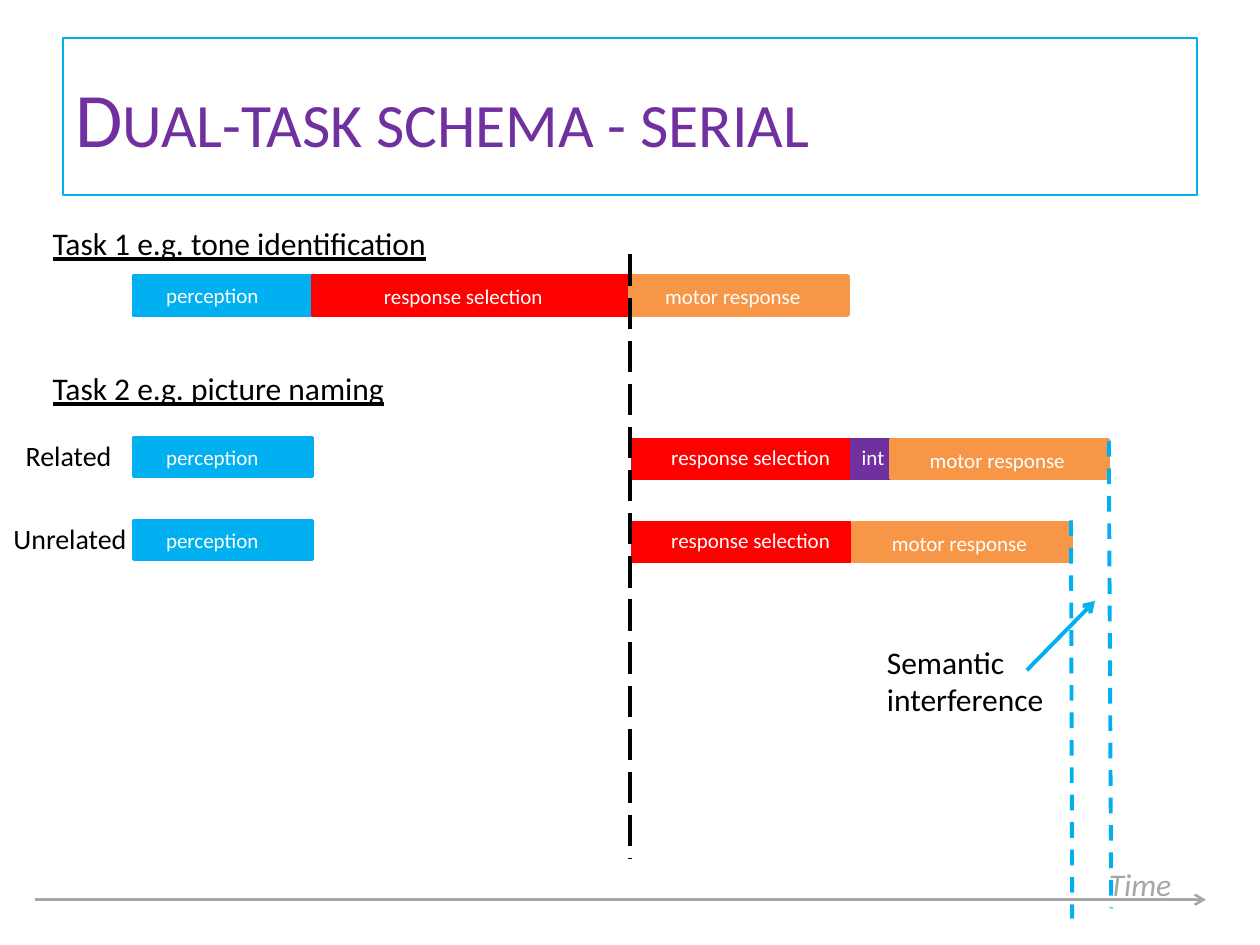
from dataclasses import dataclass

from lxml.etree import SubElement as Sub
from pptx import Presentation
from pptx.dml.color import RGBColor as Rgb
from pptx.enum.dml import MSO_LINE as Dash
from pptx.enum.shapes import MSO_CONNECTOR as Conn, MSO_SHAPE as Shape
from pptx.enum.text import MSO_ANCHOR as Anchor, PP_ALIGN as Align
from pptx.oxml.ns import qn
from pptx.util import Pt


@dataclass(frozen=True)
class Theme:
    """Colours, font and type sizes of the slide."""
    font: str = "Calibri"
    blue: str = "00B0F0"
    red: str = "FF0000"
    orange: str = "F79646"
    purple: str = "7030A0"
    grey: str = "A6A6A6"
    black: str = "000000"
    white: str = "FFFFFF"
    title: int = 44
    head: int = 18
    row: int = 16
    bar: int = 12


T = Theme()
BAR = 22.3
LONG = 124.6


def apply(obj, form):
    """Set each attribute named in a dict of format values."""
    for key, val in form.items():
        setattr(obj, key, val)


def write(frame, text, size, color, align=Align.LEFT, **form):
    """Fill a text frame with one styled run and return the run."""
    para = frame.paragraphs[0]
    para.alignment = align
    run = para.add_run()
    run.text = text
    apply(run.font, {"name": T.font, "size": Pt(size), **form})
    run.font.color.rgb = Rgb.from_string(color)
    return run


def label(slide, box, text, size, color, wrap=True, **form):
    """Add a text box in the given box."""
    frame = slide.shapes.add_textbox(*map(Pt, box)).text_frame
    frame.word_wrap = wrap
    write(frame, text, size, color, **form)


def stroke(line, color, width, dash=None):
    """Style a line."""
    line.color.rgb = Rgb.from_string(color)
    apply(line, {"width": Pt(width), "dash_style": dash})


def rule(slide, ends, color, width=2.25, dash=None, arrow=False):
    """Draw a straight line, with an arrowhead at its end if asked."""
    link = slide.shapes.add_connector(Conn.STRAIGHT, *map(Pt, ends))
    stroke(link.line, color, width, dash)
    if arrow:
        Sub(link.line._get_or_add_ln(), qn("a:tailEnd"), type="arrow")
    Sub(link._element.spPr, qn("a:effectLst"))


def title(slide, box, text):
    """Place and style the framed title."""
    shape = slide.shapes.title
    apply(shape, dict(zip(("left", "top", "width", "height"), map(Pt, box))))
    stroke(shape.line, T.blue, 1)
    shape.text_frame.vertical_anchor = Anchor.MIDDLE
    run = write(shape.text_frame, text, T.title, T.purple)
    run._r.get_or_add_rPr().set("cap", "small")


def stage(slide, box, color, text, shift, span):
    """Draw one stage bar with its label shifted from the bar's corner."""
    bar = slide.shapes.add_shape(Shape.RECTANGLE, *map(Pt, box))
    bar.shadow.inherit = False
    bar.fill.solid()
    bar.fill.fore_color.rgb = Rgb.from_string(color)
    stroke(bar.line, color, 2)
    left, top = box[0] + shift[0], box[1] + shift[1]
    label(slide, (left, top, span, 21.6), text, T.bar, T.white)


def track(slide, left, top, parts):
    """Lay out a row of stages, each as offset, drop, width and label."""
    for dx, dy, width, color, *rest in parts:
        stage(slide, (left + dx, top + dy, width, BAR), color, *rest)


def axis(slide, box):
    """Draw the time arrow with its name at the right end."""
    left, top, width, height = box
    end = left + width
    base = top + height
    rule(slide, (left, base, end, base), T.grey, 1.5, arrow=True)
    label(slide, (end - 62.6, top, 62.6, 28.8), "Time", T.head, T.grey, italic=True)


def tasks(slide, left, top):
    """Place both task headings, the row names and the stage bars."""
    heads = (("Task 1 e.g. tone identification", 0), ("Task 2 e.g. picture naming", 82.8))
    for text, dy in heads:
        label(slide, (left, top + dy, 271.4, 28.8), text, T.head, T.black, underline=True)
    names = (("Related", 7.2, 122.4, 64), ("Unrelated", 0, 169.9, 80))
    for text, x, dy, width in names:
        label(slide, (x, top + dy, width, 26.6), text, T.row, T.black,
              wrap=False, align=Align.CENTER)

    see = (0, 0, 102.2, T.blue, "perception", (11.5, 0.5), 102.2)
    pick = (285.1, 1.2, LONG, T.red, "response selection", (15.1, -0.5), 110.9)
    blend = (410.4, 1.2, BAR, T.purple, "int", (-1.4, -0.7), 32.4)
    move = (1.2, LONG, T.orange, "motor response", (15.1, 0.9), 102.2)
    first = (
        see,
        (102.2, 0, 181.4, T.red, "response selection", (33.8, 0.7), 131.8),
        (283.7, 0, LONG, T.orange, "motor response", (13, 0.7), 102.2),
    )
    rows = ((33.1, first), (125.3, (see, pick, blend, (432.7, *move))),
            (172.8, (see, pick, (411.1, *move))))
    for dy, parts in rows:
        track(slide, left + 53.3, top + dy, parts)


def marks(slide):
    """Draw the time markers and point out the interference gap."""
    rule(slide, (360, 145.4, 360, 491), T.black, dash=Dash.LONG_DASH)
    for ends in ((612, 297.4, 612.7, 524.9), (633.6, 252, 635, 519.1)):
        rule(slide, ends, T.blue, dash=Dash.DASH)
    rule(slide, (586.8, 383, 625.7, 343.4), T.blue, arrow=True)
    label(slide, (499.7, 363.6, 149.8, 51.1), "Semantic interference", T.head, T.black)


def main():
    """Build and save the slide."""
    deck = Presentation()
    apply(deck, {"slide_width": Pt(720), "slide_height": Pt(540)})
    slide = deck.slides.add_slide(deck.slide_layouts[5])
    title(slide, (36, 21.6, 648, 90), "Dual-task schema - serial")
    axis(slide, (20.2, 491, 668.9, 23.1))
    tasks(slide, 23, 124.6)
    marks(slide)
    deck.save("out.pptx")


if __name__ == "__main__":
    main()
